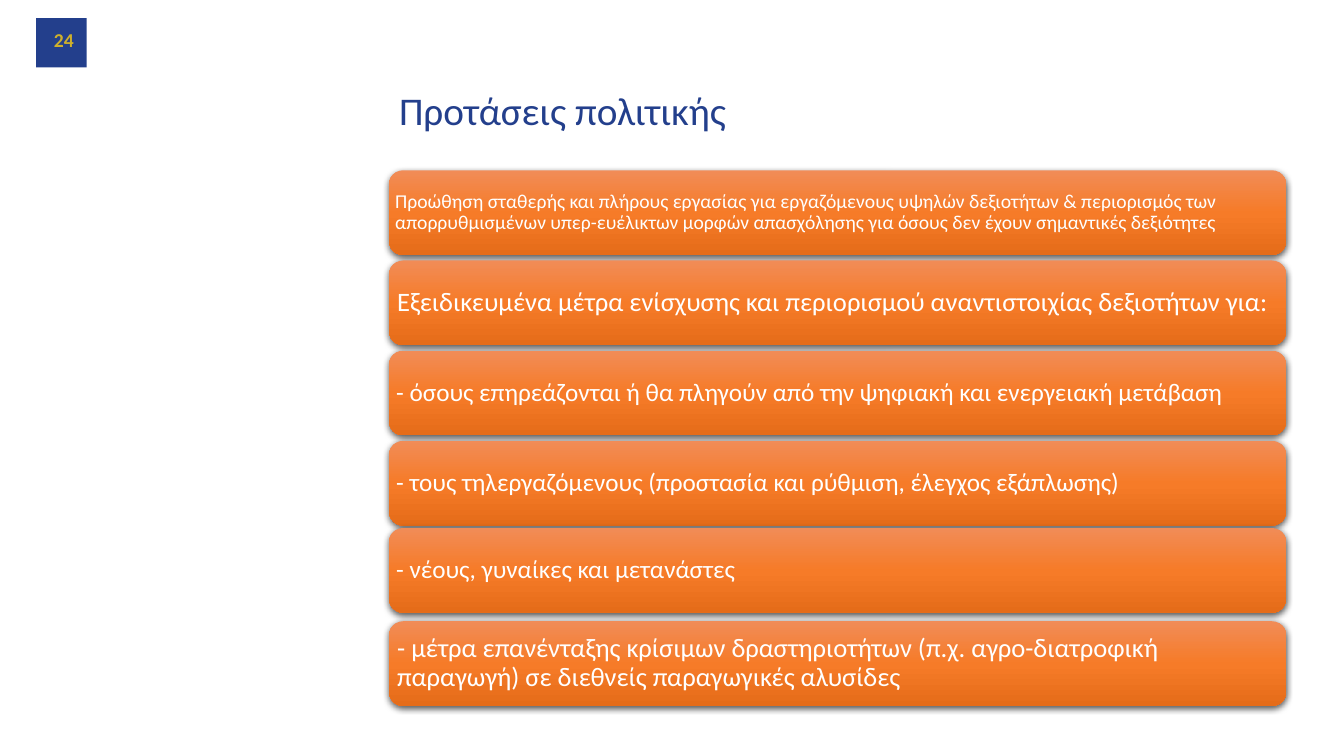
from lxml.etree import SubElement
from pptx import Presentation
from pptx.dml.color import RGBColor
from pptx.enum.shapes import MSO_SHAPE as Shape
from pptx.enum.text import MSO_ANCHOR as Anchor, PP_ALIGN as Align
from pptx.oxml.ns import qn
from pptx.util import Inches, Pt

THEME = {
    "font": "Calibri",
    "navy": "233F8C",
    "gold": "CEB02C",
    "white": "FFFFFF",
    "shadow": "000000",
    "bar": [(0, "F18C57"), (50, "F67B28"), (100, "E56C19")],
    "title": 28,
    "number": 14,
    "small": 14,
    "medium": 18,
    "large": 19,
}
PROPOSALS = [
    ("Προώθηση σταθερής και πλήρους εργασίας για εργαζόμενους υψηλών δεξιοτήτων & περιορισμός των "
     "απορρυθμισμένων υπερ-ευέλικτων μορφών απασχόλησης για όσους δεν έχουν σημαντικές δεξιότητες",
     "small", 0.02, 0),
    ("Εξειδικευμένα μέτρα ενίσχυσης και περιορισμού αναντιστοιχίας δεξιοτήτων για:", "large", 0.04, 0),
    ("- όσους επηρεάζονται ή θα πληγούν από την ψηφιακή και ενεργειακή μετάβαση", "medium", 0.03, 0),
    ("- τους τηλεργαζόμενους (προστασία και ρύθμιση, έλεγχος εξάπλωσης)", "medium", 0.03, 0),
    ("- νέους, γυναίκες και μετανάστες", "medium", 0.03, -0.4),
    ("- μέτρα επανένταξης κρίσιμων δραστηριοτήτων (π.χ. αγρο-διατροφική παραγωγή) "
     "σε διεθνείς παραγωγικές αλυσίδες", "large", 0.04, 0),
]
BAR_LEFT, BAR_TOP, BAR_WIDTH, BAR_HEIGHT, BAR_STEP = 28.95, 22.53, 66.75, 11.2, 11.93

deck = Presentation()
deck.slide_width, deck.slide_height = Inches(13.33), Inches(7.5)
page = deck.slides.add_slide(deck.slide_layouts[6])


def percent(left, top, width, height):
    across, down = deck.slide_width / 100, deck.slide_height / 100
    return int(left * across), int(top * down), int(width * across), int(height * down)


def write(box, text, size, color, align=Align.LEFT, bold=False, spacing=0.9):
    frame = box.text_frame
    frame.word_wrap = True
    frame.vertical_anchor = Anchor.MIDDLE
    para = frame.paragraphs[0]
    para.alignment = align
    para.line_spacing = spacing
    span = para.add_run()
    span.text = text
    span.font.name = THEME["font"]
    span.font.size = Pt(THEME[size])
    span.font.bold = bold
    span.font.color.rgb = RGBColor.from_string(THEME[color])


badge = page.shapes.add_shape(Shape.RECTANGLE, *percent(2.7, 2.4, 3.75, 6.53))
badge.shadow.inherit = False
badge.fill.solid()
badge.fill.fore_color.rgb = RGBColor.from_string(THEME["navy"])
badge.line.fill.background()

title = page.shapes.add_textbox(*percent(BAR_LEFT, 5.2, 65.8, 19.33))
write(title, "Προτάσεις πολιτικής", "title", "navy")

number = page.shapes.add_textbox(*percent(2.93, 2.53, 3.3, 5.33))
write(number, "24", "number", "gold", Align.RIGHT, True, 1.0)

for row, (text, size, inset, nudge) in enumerate(PROPOSALS):
    top = BAR_TOP + row * BAR_STEP + nudge
    bar = page.shapes.add_shape(Shape.ROUNDED_RECTANGLE, *percent(BAR_LEFT, top, BAR_WIDTH, BAR_HEIGHT))
    bar.line.fill.background()

    bar.fill.gradient()
    bar.fill.gradient_angle = 270
    stops = bar.element.spPr.find(".//" + qn("a:gsLst"))
    for stop in list(stops):
        stops.remove(stop)
    for position, color in THEME["bar"]:
        stop = SubElement(stops, qn("a:gs"), pos=str(position * 1000))
        SubElement(stop, qn("a:srgbClr"), val=color)

    bar.shadow.inherit = False
    effects = bar.element.spPr.find(qn("a:effectLst"))
    shadow = SubElement(effects, qn("a:outerShdw"), blurRad=str(Pt(4.5)), dist=str(Pt(1.5)),
                        dir="5400000", algn="ctr", rotWithShape="0")
    shade = SubElement(shadow, qn("a:srgbClr"), val=THEME["shadow"])
    SubElement(shade, qn("a:alpha"), val="63000")

    frame = bar.text_frame
    frame.margin_left = frame.margin_right = Inches(inset)
    frame.margin_top = frame.margin_bottom = Inches(inset)
    write(bar, text, size, "white")

deck.save("out.pptx")
